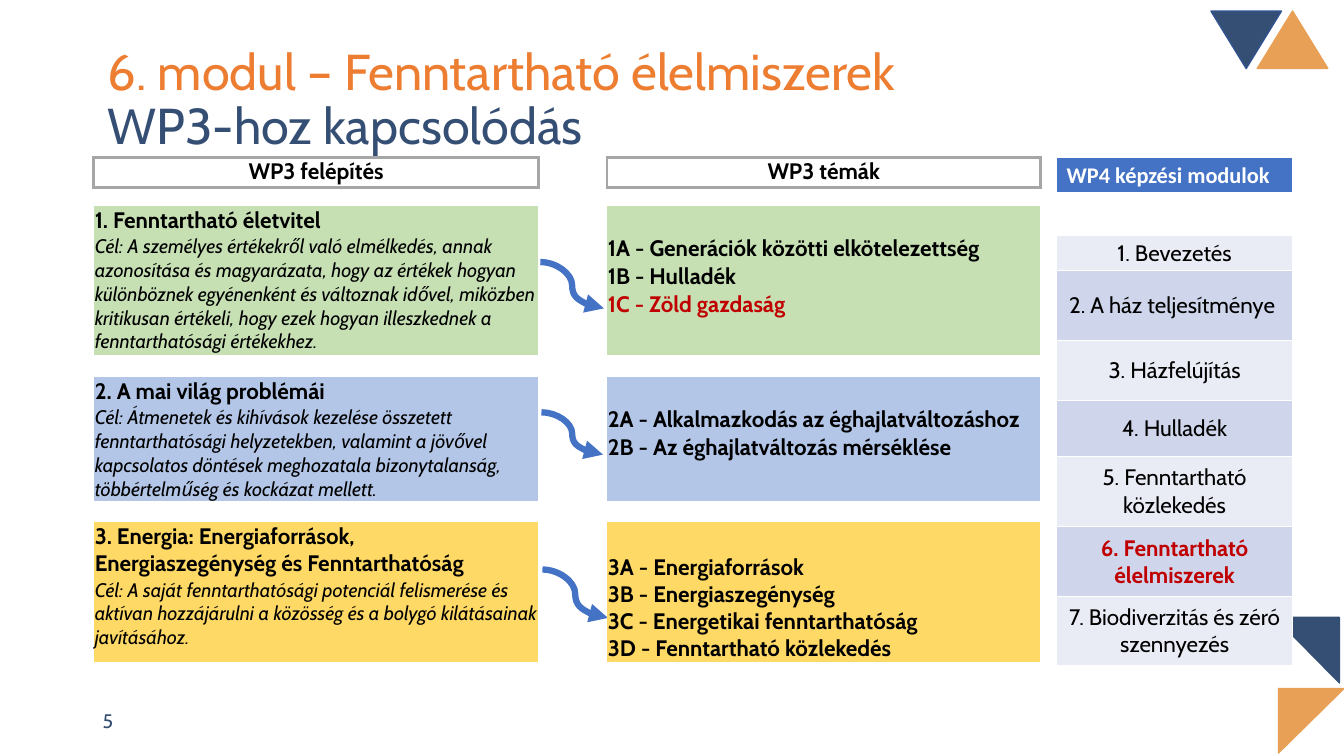
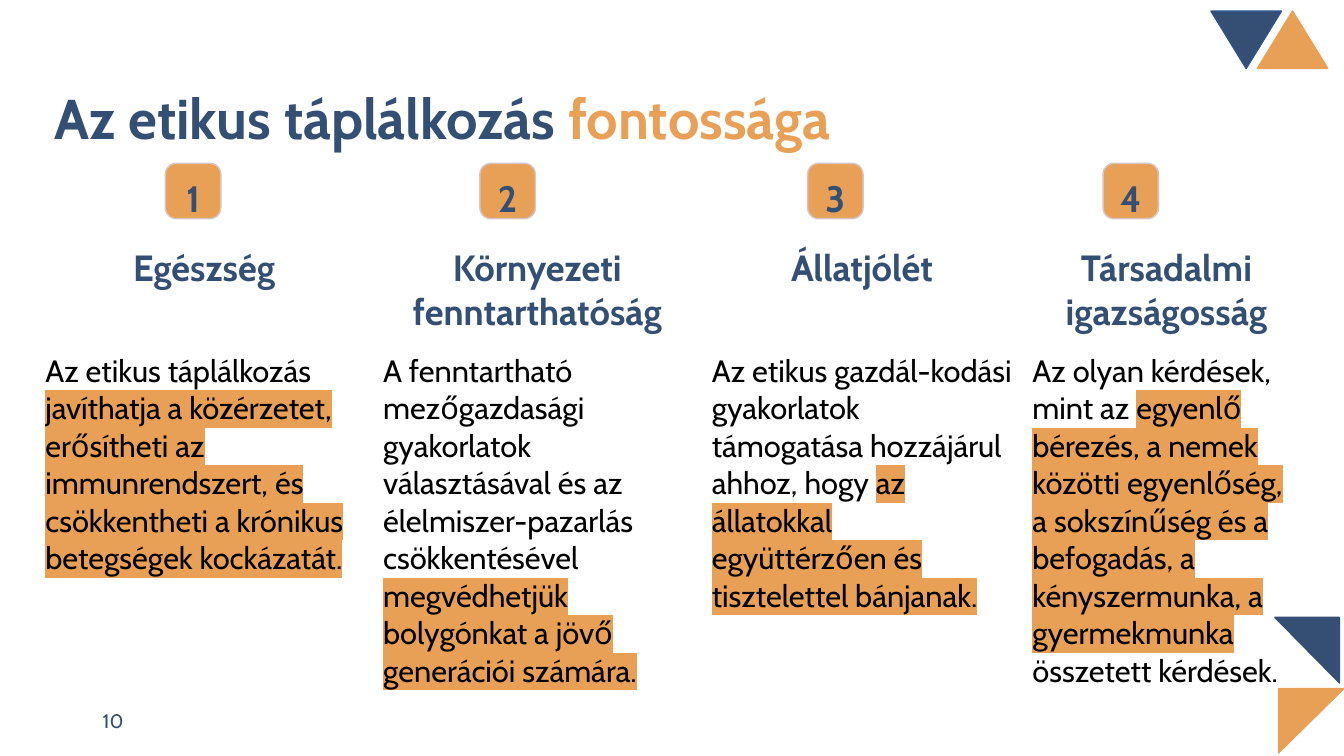
"""Build two slides on sustainable food: module links and ethical eating."""
from lxml.etree import SubElement
from pptx import Presentation
from pptx.dml.color import RGBColor
from pptx.enum.shapes import MSO_CONNECTOR, MSO_SHAPE
from pptx.enum.text import MSO_ANCHOR, PP_ALIGN
from pptx.oxml.ns import qn
from pptx.util import Inches, Pt

NAVY = RGBColor(0x35, 0x4F, 0x74)
NAVY_EDGE = RGBColor(0x31, 0x53, 0x8F)
HEADING = RGBColor(0x34, 0x4F, 0x74)
ORANGE = RGBColor(0xE8, 0x9F, 0x56)
TITLE_ORANGE = RGBColor(0xED, 0x7D, 0x31)
BLUE = RGBColor(0x44, 0x72, 0xC4)
RED = RGBColor(0xC0, 0x00, 0x00)
BLACK = RGBColor(0x00, 0x00, 0x00)
WHITE = RGBColor(0xFF, 0xFF, 0xFF)
GREY = RGBColor(0xA6, 0xA6, 0xA6)
BADGE_EDGE = RGBColor(0xD7, 0xC5, 0xC1)
GREEN_FILL = RGBColor(0xC6, 0xE0, 0xB4)
BLUE_FILL = RGBColor(0xB3, 0xC6, 0xE7)
YELLOW_FILL = RGBColor(0xFF, 0xD9, 0x66)
PALE_ROW = RGBColor(0xE9, 0xEB, 0xF5)
DARK_ROW = RGBColor(0xCF, 0xD5, 0xEA)
FONT = "Cabin"
PLAIN_TABLE = "{2D5ABB26-0587-4C30-8999-92F81FD0307C}"


def write(para, text, size, color=BLACK, bold=False, italic=False, font=FONT, highlight=None):
    span = para.add_run()
    span.text = text
    span.font.name = font
    span.font.size = Pt(size)
    span.font.bold = bold
    span.font.italic = italic
    span.font.color.rgb = color
    if highlight is not None:
        properties = span.font._element
        mark = SubElement(properties, qn("a:highlight"))
        SubElement(mark, qn("a:srgbClr"), val=str(highlight))
        properties.find(qn("a:solidFill")).addnext(mark)


def add_grid(page, left, top, widths, heights, margins):
    frame = page.shapes.add_table(len(heights), len(widths), Inches(left), Inches(top),
                                  Inches(sum(widths)), Inches(sum(heights)))
    table = frame.table
    table.first_row = table.horz_banding = False
    table._tbl.tblPr.find(qn("a:tableStyleId")).text = PLAIN_TABLE
    for column, width in zip(table.columns, widths):
        column.width = Inches(width)
    for row, height in zip(table.rows, heights):
        row.height = Inches(height)
    for cell in table.iter_cells():
        cell.margin_left, cell.margin_top, cell.margin_right, cell.margin_bottom = map(Inches, margins)
        cell.fill.background()
        SubElement(cell.text_frame.paragraphs[0]._p, qn("a:endParaRPr"), sz="800")
    return table


deck = Presentation()
deck.slide_width = Inches(13.33)
deck.slide_height = Inches(7.5)

triangles = [
    (12.47, 0.11, 0.7, 0.57, 0, 0.5, ORANGE, ORANGE),
    (12.68, 6.83, 0.65, 0.64, 180, 1, ORANGE, ORANGE),
    (12.64, 6.13, 0.65, 0.64, 270, 1, NAVY, NAVY),
    (12.01, 0.11, 0.7, 0.57, 180, 0.5, NAVY, NAVY_EDGE),
]
pages = []
for number in ("5", "10"):
    page = deck.slides.add_slide(deck.slide_layouts[6])
    box = page.shapes.add_textbox(Inches(0.92), Inches(6.95), Inches(3), Inches(0.4))
    box.text_frame.word_wrap = True
    box.text_frame.vertical_anchor = MSO_ANCHOR.MIDDLE
    write(box.text_frame.paragraphs[0], number, 14, NAVY)
    for left, top, width, height, rotation, apex, fill, edge in triangles:
        triangle = page.shapes.add_shape(MSO_SHAPE.ISOSCELES_TRIANGLE, Inches(left), Inches(top),
                                         Inches(width), Inches(height))
        triangle.adjustments[0] = apex
        triangle.rotation = rotation
        triangle.shadow.inherit = False
        triangle.fill.solid()
        triangle.fill.fore_color.rgb = fill
        triangle.line.color.rgb = edge
        triangle.line.width = Pt(1)
    pages.append(page)
module_page, ethics_page = pages

box = module_page.shapes.add_textbox(Inches(0.97), Inches(0.28), Inches(11.5), Inches(1.45))
box.text_frame.word_wrap = True
box.text_frame.vertical_anchor = MSO_ANCHOR.MIDDLE
para = box.text_frame.paragraphs[0]
para.line_spacing = 0.9
write(para, "6. modul – Fenntartható élelmiszerek", 36, TITLE_ORANGE)
para.add_line_break()
write(para, "WP3-hoz kapcsolódás", 36, NAVY)

for start_x, start_y, end_x, end_y in [(5.36, 2.6, 5.99, 3.06), (5.37, 4.09, 5.98, 4.51),
                                       (5.38, 5.65, 6.03, 6.13)]:
    arrow = module_page.shapes.add_connector(MSO_CONNECTOR.CURVE, Inches(start_x), Inches(start_y),
                                             Inches(end_x), Inches(end_y))
    arrow.line.color.rgb = BLUE
    arrow.line.width = Pt(4.5)
    properties = arrow._element.spPr
    SubElement(properties.find(qn("a:ln")), qn("a:tailEnd"), type="triangle")
    SubElement(properties, qn("a:effectLst"))

modules = ["1. Bevezetés", "2. A ház teljesítménye ", "3. Házfelújítás", "4. Hulladék",
           "5. Fenntartható közlekedés", "6. Fenntartható élelmiszerek",
           "7. Biodiverzitás és zéró szennyezés"]
module_table = add_grid(module_page, 10.48, 1.56, [2.34],
                        [0.36, 0.41, 0.35, 0.69, 0.6, 0.55, 0.7, 0.69, 0.69], (0.03, 0.02, 0.03, 0.02))
header = module_table.cell(0, 0)
header.margin_left = header.margin_right = Inches(0.1)
header.margin_top = header.margin_bottom = Inches(0.05)
header.fill.solid()
header.fill.fore_color.rgb = BLUE
write(header.text_frame.paragraphs[0], "WP4 képzési modulok", 16, WHITE, bold=True, font="Calibri")
for index, module in enumerate(modules):
    cell = module_table.cell(index + 2, 0)
    cell.vertical_anchor = MSO_ANCHOR.MIDDLE
    cell.fill.solid()
    cell.fill.fore_color.rgb = DARK_ROW if index % 2 else PALE_ROW
    para = cell.text_frame.paragraphs[0]
    para.alignment = PP_ALIGN.CENTER
    current = module.startswith("6.")
    write(para, module, 16, RED if current else BLACK, bold=current)

sections = [
    (GREEN_FILL, 2, 5, "1. Fenntartható életvitel",
     "Cél: A személyes értékekről való elmélkedés, annak azonosítása és magyarázata, hogy az értékek "
     "hogyan különböznek egyénenként és változnak idővel, miközben kritikusan értékeli, hogy ezek "
     "hogyan illeszkednek a fenntarthatósági értékekhez.",
     3, [["1A - Generációk közötti elkötelezettség"], ["1B - Hulladék"], ["1C - Zöld gazdaság"]]),
    (BLUE_FILL, 7, 9, "2. A mai világ problémái",
     "Cél: Átmenetek és kihívások kezelése összetett fenntarthatósági helyzetekben, valamint a jövővel "
     "kapcsolatos döntések meghozatala bizonytalanság, többértelműség és kockázat mellett.",
     8, [["2A - Alkalmazkodás az éghajlatváltozáshoz"], ["2B - Az éghajlatváltozás mérséklése"]]),
    (YELLOW_FILL, 11, 12, "3. Energia: Energiaforrások, Energiaszegénység és Fenntarthatóság",
     "Cél: A saját fenntarthatósági potenciál felismerése és aktívan hozzájárulni a közösség és a "
     "bolygó kilátásainak javításához.",
     11, [["3A - Energiaforrások", "3B - Energiaszegénység", "3C - Energetikai fenntarthatóság",
           "3D - Fenntartható közlekedés"]]),
]
topic_table = add_grid(module_page, 0.93, 1.56, [4.41, 0.68, 4.3],
                       [0.3, 0.18, 0.27, 0.28, 0.28, 0.65, 0.21, 0.27, 0.28, 0.68, 0.21, 0.54, 0.84],
                       (0.01, 0.01, 0.01, 0))
for column, caption in ((0, "WP3 felépítés"), (2, "WP3 témák")):
    para = topic_table.cell(0, column).text_frame.paragraphs[0]
    para.alignment = PP_ALIGN.CENTER
    write(para, caption, 16, bold=True)
for fill, first, last, title, goal, topic_row, topics in sections:
    for row in range(first, last + 1):
        for column in (0, 2):
            cell = topic_table.cell(row, column)
            cell.fill.solid()
            cell.fill.fore_color.rgb = fill
    write(topic_table.cell(first, 0).text_frame.paragraphs[0], title, 16, bold=True)
    goal_cell = topic_table.cell(first + 1, 0)
    if last > first + 1:
        goal_cell.merge(topic_table.cell(last, 0))
    write(goal_cell.text_frame.paragraphs[0], goal, 14, italic=True)
    for offset, lines in enumerate(topics):
        frame = topic_table.cell(topic_row + offset, 2).text_frame
        for index, line in enumerate(lines):
            para = frame.add_paragraph() if index else frame.paragraphs[0]
            write(para, line, 16, RED if line.startswith("1C") else BLACK, bold=True)
energy_cell = topic_table.cell(11, 2)
energy_cell.merge(topic_table.cell(12, 2))
energy_cell.vertical_anchor = MSO_ANCHOR.BOTTOM

borders = [(topic_table.cell(0, column), GREY, (2.25,) * 4) for column in (0, 2)]
borders += [(cell, WHITE, (1, 1, 1, 1)) for cell in module_table.iter_cells()]
borders.append((header, WHITE, (1, 1, 1, 3)))
for cell, color, widths in borders:
    properties = cell._tc.get_or_add_tcPr()
    for index, (side, width) in enumerate(zip(("a:lnL", "a:lnR", "a:lnT", "a:lnB"), widths)):
        previous = properties.find(qn(side))
        if previous is not None:
            properties.remove(previous)
        line = SubElement(properties, qn(side), w=str(Pt(width)))
        SubElement(SubElement(line, qn("a:solidFill")), qn("a:srgbClr"), val=str(color))
        properties.insert(index, line)

reasons = [
    ("Egészség", 1.64, "Az etikus táplálkozás ",
     "javíthatja a közérzetet, erősítheti az immunrendszert, és csökkentheti a krónikus betegségek "
     "kockázatát.", ""),
    ("Környezeti fenntarthatóság", 4.76,
     "A fenntartható mezőgazdasági gyakorlatok választásával és az élelmiszer-pazarlás csökkentésével ",
     "megvédhetjük bolygónkat a jövő generációi számára.", ""),
    ("Állatjólét", 8.01, "Az etikus gazdál-kodási gyakorlatok támogatása hozzájárul ahhoz, hogy ",
     "az állatokkal együttérzően és tisztelettel bánjanak.", ""),
    ("Társadalmi igazságosság", 10.94, "Az olyan kérdések, mint az ",
     "egyenlő bérezés, a nemek közötti egyenlőség, a sokszínűség és a befogadás, a kényszermunka, "
     "a gyermekmunka ", "összetett kérdések."),
]
reason_table = add_grid(ethics_page, 0.35, 2.39, [3.35, 3.26, 3.18, 2.86], [1.06, 3.77],
                        (0.1, 0.05, 0.1, 0.05))

box = ethics_page.shapes.add_textbox(Inches(0.44), Inches(0.69), Inches(9.85), Inches(0.76))
box.text_frame.word_wrap = False
para = box.text_frame.paragraphs[0]
para.line_spacing = Pt(54.7)
write(para, "Az etikus táplálkozás ", 40, HEADING, bold=True)
write(para, "fontossága", 40, ORANGE, bold=True)

for column, (heading, badge_left, opening, stressed, closing) in enumerate(reasons):
    para = reason_table.cell(0, column).text_frame.paragraphs[0]
    para.alignment = PP_ALIGN.CENTER
    write(para, heading, 26, HEADING, bold=True)
    para = reason_table.cell(1, column).text_frame.paragraphs[0]
    write(para, opening, 22)
    write(para, stressed, 22, highlight=ORANGE)
    if closing:
        write(para, closing, 22)

    badge = ethics_page.shapes.add_shape(MSO_SHAPE.ROUNDED_RECTANGLE, Inches(badge_left), Inches(1.62),
                                         Inches(0.55), Inches(0.55))
    badge.adjustments[0] = 0.2
    badge.shadow.inherit = False
    badge.fill.solid()
    badge.fill.fore_color.rgb = ORANGE
    badge.line.color.rgb = BADGE_EDGE
    badge.line.width = Pt(1.09)
    frame = badge.text_frame
    frame.margin_left = frame.margin_right = frame.margin_bottom = 0
    frame.margin_top = Inches(0.07)
    frame.vertical_anchor = MSO_ANCHOR.TOP
    para = frame.paragraphs[0]
    para.alignment = PP_ALIGN.CENTER
    para.line_spacing = Pt(32.8)
    write(para, str(column + 1), 26.2, HEADING, bold=True)

deck.save("out.pptx")
